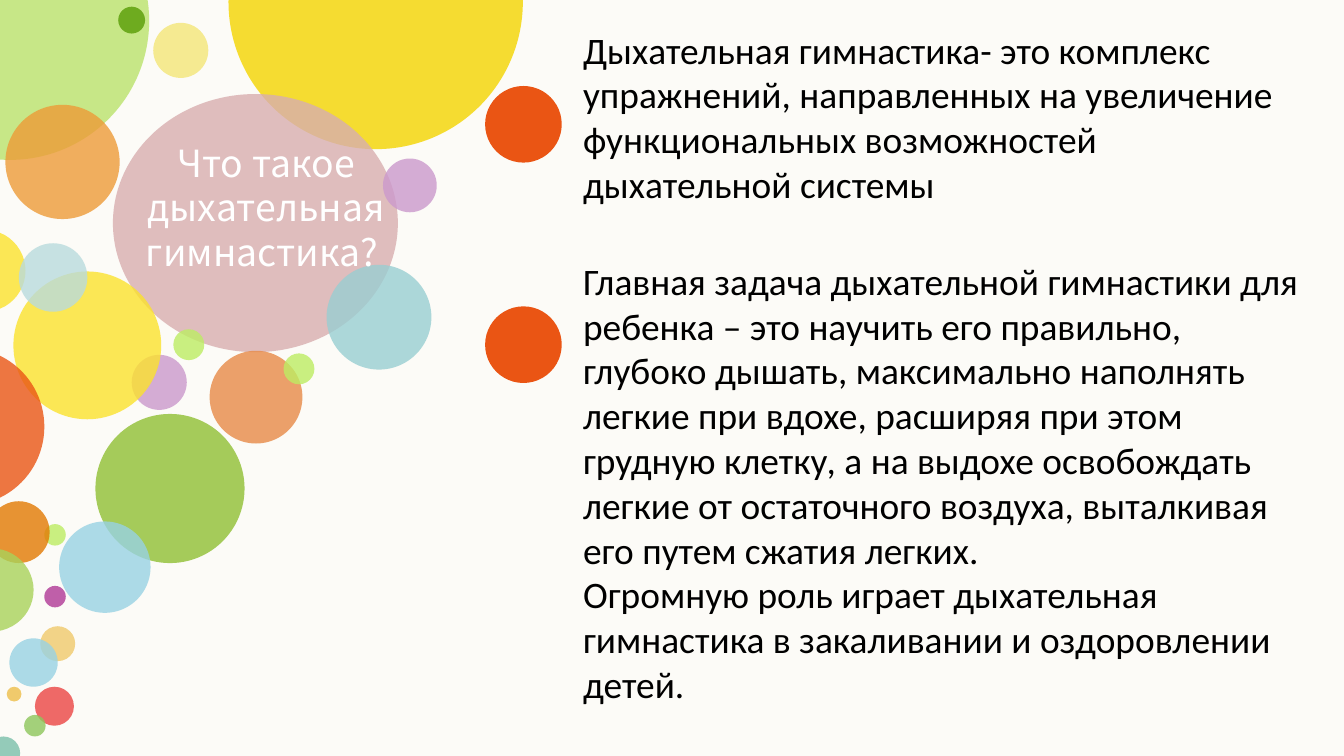
import pptx
import pptx.dml.color
import pptx.enum.shapes
import pptx.enum.text
import pptx.util
from lxml import etree

# Content
TITLE = "Что такое дыхательная гимнастика? "
DEFINITION = [
    "Дыхательная гимнастика- это комплекс упражнений, направленных на увеличение "
    "функциональных возможностей дыхательной системы",
]
PURPOSE = [
    "Главная задача дыхательной гимнастики для ребенка – это научить его правильно, "
    "глубоко дышать, максимально наполнять легкие при вдохе, расширяя при этом грудную "
    "клетку, а на выдохе освобождать легкие от остаточного воздуха, выталкивая его путем "
    "сжатия легких.",
    "Огромную роль играет дыхательная гимнастика в закаливании и оздоровлении детей.",
]

COLORS = {
    "background": "FCFBF7", "white": "FFFFFF", "black": "000000",
    "pale green": "BAE36B", "dark green": "6EAB1F", "apricot": "ED9B38",
    "cream": "F5EA91", "gold": "F4D500", "rose": "D8AEAF", "teal": "99CED2",
    "lilac": "CB99CC", "copper": "E78A47", "green": "A5CB5A", "lime": "BDED63",
    "yellow": "FBE22D", "purple": "B03896", "sand": "F0CA6C", "sea": "7BBFAA",
    "red": "EB4544", "grass": "8DC65B", "sky": "98D2E3", "mist": "B9DBDD",
    "amber": "E27902", "leaf": "A9D25A", "orange": "EA5514",
}
SLIDE_WIDTH = 10
SLIDE_HEIGHT = SLIDE_WIDTH * 9 / 16
SOLID, SHEER = 100, 80

# Bubbles from back to front: left, top, width, height, color, opacity in percent
BUBBLES = [
    (-0.96, -0.88, 2.07, 2.07, "pale green", SHEER),
    (0.88, 0.05, 0.2, 0.2, "dark green", SOLID),
    (0.04, 0.78, 0.85, 0.85, "apricot", SHEER),
    (1.14, 0.17, 0.41, 0.41, "cream", SOLID),
    (1.7, -1.08, 2.19, 2.19, "gold", SHEER),
    (0.84, 0.7, 2.12, 1.92, "rose", SHEER),
    (2.43, 1.97, 0.78, 0.78, "teal", SHEER),
    (2.85, 1.18, 0.4, 0.4, "lilac", SHEER),
    (1.56, 2.61, 0.69, 0.69, "copper", SHEER),
    (0.71, 3.08, 1.11, 1.11, "green", SOLID),
    (2.11, 2.63, 0.23, 0.23, "lime", SHEER),
    (1.29, 2.45, 0.23, 0.23, "lime", SHEER),
    (0.98, 2.64, 0.41, 0.41, "lilac", SHEER),
    (0.1, 2.02, 1.1, 1.1, "yellow", SHEER),
    (-0.42, 1.71, 0.61, 0.61, "yellow", SHEER),
    (0.33, 3.9, 0.16, 0.16, "lime", SHEER),
    (0.33, 4.36, 0.16, 0.16, "purple", SHEER),
    (0.3, 4.66, 0.26, 0.26, "sand", SHEER),
    (0.05, 5.11, 0.11, 0.11, "sand", SOLID),
    (-0.1, 5.48, 0.25, 0.25, "sea", SHEER),
    (0.26, 5.11, 0.29, 0.29, "red", SHEER),
    (0.18, 5.32, 0.16, 0.16, "grass", SHEER),
    (0.07, 4.75, 0.36, 0.36, "sky", SHEER),
    (0.14, 1.81, 0.51, 0.51, "mist", SHEER),
    (0.44, 3.88, 0.68, 0.68, "sky", SHEER),
    (-0.09, 3.73, 0.46, 0.46, "amber", SHEER),
    (-0.38, 4.08, 0.63, 0.62, "leaf", SHEER),
    (-0.83, 2.59, 1.16, 1.17, "orange", SHEER),
]

# Points: marker top, text top, text width, text height, paragraphs
MARKER_LEFT, MARKER_SIZE, TEXT_LEFT = 3.61, 0.57, 4.24
POINTS = [
    (0.64, 0.15, 5.35, 1.43, DEFINITION),
    (2.28, 1.87, 5.6, 3.77, PURPOSE),
]


def rgb(name):
    return pptx.dml.color.RGBColor.from_string(COLORS[name])


def inches(*lengths):
    return [pptx.util.Inches(length) for length in lengths]


def add_circle(slide, left, top, width, height, color, opacity=SOLID):
    shape = slide.shapes.add_shape(
        pptx.enum.shapes.MSO_SHAPE.OVAL, *inches(left, top, width, height))
    shape.shadow.inherit = False
    shape.line.fill.background()
    shape.fill.solid()
    shape.fill.fore_color.rgb = rgb(color)
    if opacity < SOLID:
        color_tag = shape.element.spPr.find(".//" + pptx.oxml.ns.qn("a:srgbClr"))
        alpha = etree.SubElement(color_tag, pptx.oxml.ns.qn("a:alpha"))
        alpha.set("val", str(opacity * 1000))


def write(frame, texts, font_name, color):
    frame.word_wrap = True
    frame.auto_size = pptx.enum.text.MSO_AUTO_SIZE.SHAPE_TO_FIT_TEXT
    frame.vertical_anchor = pptx.enum.text.MSO_ANCHOR.TOP
    frame.text = "\n".join(texts)
    for paragraph in frame.paragraphs:
        paragraph.font.name = font_name
        paragraph.font.size = pptx.util.Pt(20)
        paragraph.font.color.rgb = rgb(color)


presentation = pptx.Presentation()
presentation.slide_width, presentation.slide_height = inches(SLIDE_WIDTH, SLIDE_HEIGHT)
slide = presentation.slides.add_slide(presentation.slide_layouts[5])
slide.background.fill.solid()
slide.background.fill.fore_color.rgb = rgb("background")

# Bubbles
for bubble in BUBBLES:
    add_circle(slide, *bubble)

# Title, raised above the bubbles
title = slide.shapes.title
title.element.getparent().append(title.element)
title.left, title.top, title.width, title.height = inches(0.84, 1.04, 2.28, 1)
frame = title.text_frame
frame.margin_left = frame.margin_top = frame.margin_right = frame.margin_bottom = 0
write(frame, [TITLE], "Noto Sans CJK SC", "white")
frame.paragraphs[0].alignment = pptx.enum.text.PP_ALIGN.CENTER

# Points with round markers
for marker_top, text_top, width, height, texts in POINTS:
    add_circle(slide, MARKER_LEFT, marker_top, MARKER_SIZE, MARKER_SIZE, "orange")
    box = slide.shapes.add_textbox(*inches(TEXT_LEFT, text_top, width, height))
    write(box.text_frame, texts, "Calibri", "black")

presentation.save("out.pptx")
